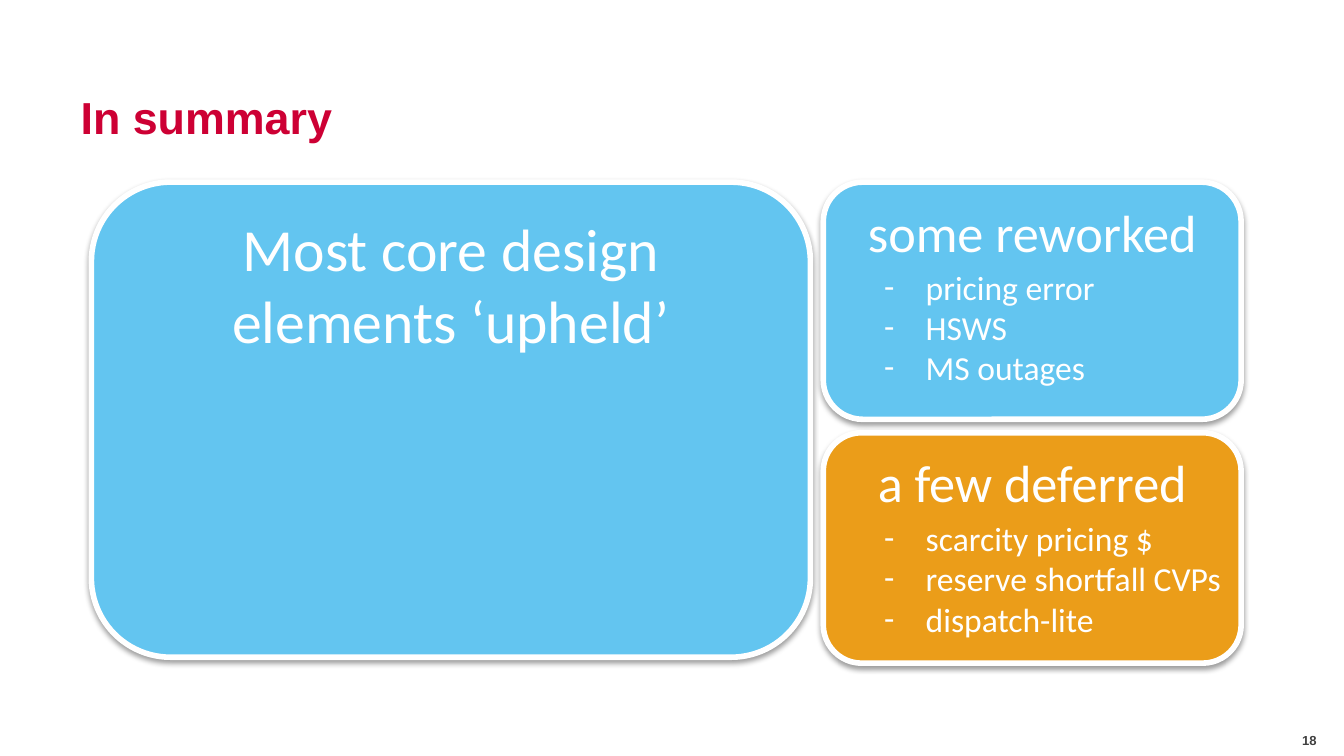
from lxml.etree import SubElement
from pptx import Presentation
from pptx.dml.color import RGBColor
from pptx.enum.shapes import MSO_SHAPE
from pptx.enum.text import MSO_ANCHOR, PP_ALIGN
from pptx.oxml.ns import qn
from pptx.util import Emu, Pt

EMU_PER_PX = 4572
RED, BLUE, ORANGE = "CD0034", "63C5F0", "EB9D19"
WHITE, GREY, BLACK = "FFFFFF", "404040", "000000"


def px(length):
    return Emu(length * EMU_PER_PX)


def colour(value):
    return RGBColor.from_string(value)


class SummarySlide:
    heading_font = "Arial"
    body_font = "Calibri"

    def __init__(self, presentation):
        self.slide = presentation.slides.add_slide(presentation.slide_layouts[5])

    def run(self, paragraph, words, size, hue, font, bold=False):
        run = paragraph.add_run()
        run.text = words
        run.font.size = Pt(size)
        run.font.name = font
        run.font.bold = bold
        run.font.color.rgb = colour(hue)

    def title(self, words, left, top, width, height):
        title = self.slide.shapes.title
        title.left, title.top, title.width, title.height = map(px, (left, top, width, height))
        title.text_frame.vertical_anchor = MSO_ANCHOR.MIDDLE
        paragraph = title.text_frame.paragraphs[0]
        paragraph.alignment = PP_ALIGN.LEFT
        paragraph.line_spacing = Pt(40)
        self.run(paragraph, words, 24, RED, self.heading_font, True)

    def text_frame(self, left, top, width, height):
        frame = self.slide.shapes.add_textbox(*map(px, (left, top, width, height))).text_frame
        frame.word_wrap = True
        frame.vertical_anchor = MSO_ANCHOR.MIDDLE
        return frame

    def page_number(self, words, left, top, width, height):
        frame = self.text_frame(left, top, width, height)
        self.run(frame.paragraphs[0], words, 7, GREY, self.heading_font, True)

    def card(self, words, size, fill, left, top, width, height):
        card = self.slide.shapes.add_shape(
            MSO_SHAPE.ROUNDED_RECTANGLE, *map(px, (left, top, width, height)))
        card.fill.solid()
        card.fill.fore_color.rgb = colour(fill)
        card.line.color.rgb = colour(WHITE)
        card.line.width = Pt(3)
        self.shadow(card)
        card.text_frame.word_wrap = True
        card.text_frame.vertical_anchor = MSO_ANCHOR.TOP
        paragraph = card.text_frame.paragraphs[0]
        paragraph.alignment = PP_ALIGN.CENTER
        self.run(paragraph, words, size, WHITE, self.body_font)

    def shadow(self, card):
        card.shadow.inherit = False
        effects = card._element.spPr.find(qn("a:effectLst"))
        outer = SubElement(effects, qn("a:outerShdw"), blurRad=str(Pt(3.1)),
                           dist=str(Pt(1.6)), dir="5400000", rotWithShape="0")
        tint = SubElement(outer, qn("a:srgbClr"), val=BLACK)
        SubElement(tint, qn("a:alpha"), val="38000")

    def dash_list(self, items, left, top, width, height):
        frame = self.text_frame(left, top, width, height)
        for index, item in enumerate(items):
            paragraph = frame.add_paragraph() if index else frame.paragraphs[0]
            properties = paragraph._p.get_or_add_pPr()
            properties.set("marL", str(px(62)))
            properties.set("indent", str(-px(62)))
            SubElement(properties, qn("a:buFont"), typeface=self.body_font)
            SubElement(properties, qn("a:buChar"), char="-")
            self.run(paragraph, item, 18, WHITE, self.body_font)


def main():
    presentation = Presentation()
    presentation.slide_width, presentation.slide_height = px(2000), px(1125)
    summary = SummarySlide(presentation)
    summary.page_number("18", 1918, 1078, 92, 46)
    summary.title("In summary", 100, 68, 1800, 180)
    summary.card("Most core design elements ‘upheld’", 32, BLUE, 136, 271, 1070, 707)

    outcomes = [
        ("some reworked", BLUE, 271, 353, 327,
         ["pricing error", "HSWS", "MS outages"]),
        ("a few deferred", ORANGE, 644, 343, 701,
         ["scarcity pricing $", "reserve shortfall CVPs", "dispatch-lite"]),
    ]
    for heading, fill, top, height, list_top, items in outcomes:
        summary.card(heading, 28, fill, 1225, top, 622, height)
        summary.dash_list(items, 1296, list_top, 552, 320)

    presentation.save("out.pptx")


if __name__ == "__main__":
    main()
